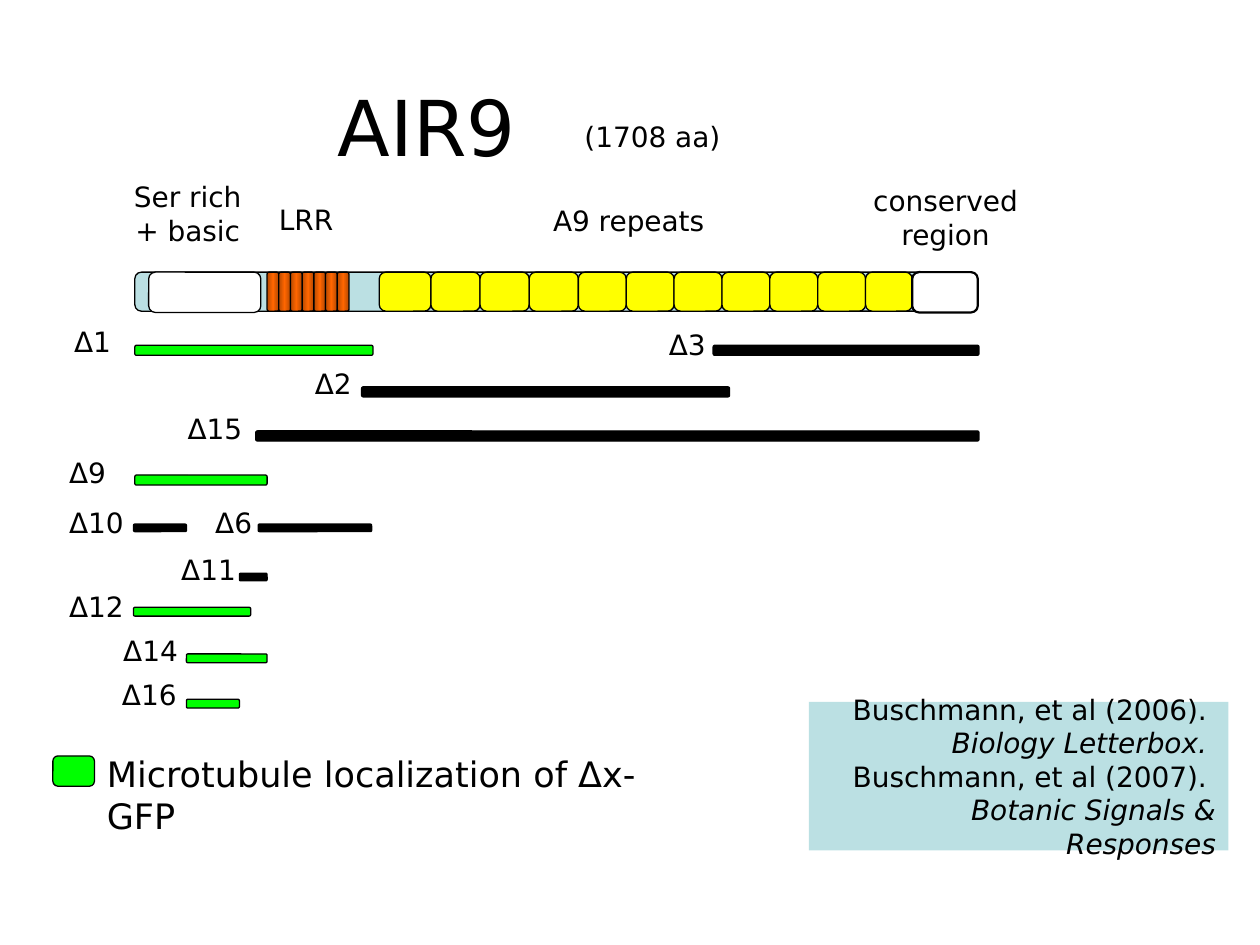
import copy
import itertools

import pptx
import pptx.dml.color
import pptx.enum.shapes
import pptx.enum.text
import pptx.oxml.ns
import pptx.util

Inches = pptx.util.Inches
ALIGN = pptx.enum.text.PP_ALIGN
ANCHOR = pptx.enum.text.MSO_ANCHOR
AUTO_SIZE = pptx.enum.text.MSO_AUTO_SIZE
SHAPE = pptx.enum.shapes.MSO_SHAPE

COLORS = {
    "ink": "000000",
    "white": "FFFFFF",
    "backbone": "BBE0E3",
    "repeat": "FFFF00",
    "localized": "00FF00",
    "lrr_edge": "B64900",
    "lrr_middle": "FF6600",
}
FONT = "DejaVu Sans"

# name, label left and top, bar left, top, width and height, localizes to microtubules
DELETIONS = [
    ("Δ1", 0.04, 0, 0.62, 0.21, 1.89, 0.08, True),
    ("Δ3", 4.76, 0.02, 5.21, 0.21, 2.11, 0.08, False),
    ("Δ2", 1.95, 0.33, 2.42, 0.54, 2.92, 0.08, False),
    ("Δ15", 0.94, 0.69, 1.58, 0.89, 5.74, 0.08, False),
    ("Δ9", 0, 1.04, 0.62, 1.24, 1.05, 0.08, True),
    ("Δ10", 0, 1.43, 0.61, 1.63, 0.42, 0.06, False),
    ("Δ6", 1.16, 1.43, 1.6, 1.63, 0.9, 0.06, False),
    ("Δ11", 0.89, 1.81, 1.45, 2.02, 0.22, 0.06, False),
    ("Δ12", 0, 2.1, 0.61, 2.29, 0.93, 0.07, True),
    ("Δ14", 0.43, 2.45, 1.03, 2.66, 0.64, 0.07, True),
    ("Δ16", 0.42, 2.8, 1.03, 3.02, 0.42, 0.07, True),
]


def rgb(name):
    return pptx.dml.color.RGBColor.from_string(COLORS[name])


def apply_format(target, values):
    for attribute, value in values.items():
        setattr(target, attribute, value)


def write(frame, lines, size=16, align=ALIGN.LEFT, italic_lines=(), **frame_format):
    """Fill a text frame with one paragraph per line."""
    apply_format(frame, {"word_wrap": False,
                         "auto_size": AUTO_SIZE.SHAPE_TO_FIT_TEXT, **frame_format})
    for index, line in enumerate(lines):
        paragraph = frame.add_paragraph() if index else frame.paragraphs[0]
        paragraph.alignment = align
        run = paragraph.add_run()
        run.text = line
        apply_format(run.font, {"name": FONT, "size": pptx.util.Pt(size),
                                "italic": index in italic_lines})
        run.font.color.rgb = rgb("ink")


def add_label(slide, left, top, width, height, lines, **text_format):
    label = slide.shapes.add_textbox(*map(Inches, (left, top, width, height)))
    write(label.text_frame, lines, **text_format)


def add_block(slide, left, top, width, height, color, line_width=0.75,
              preset=SHAPE.ROUNDED_RECTANGLE):
    block = slide.shapes.add_shape(preset, *map(Inches, (left, top, width, height)))
    block.shadow.inherit = False
    block.fill.solid()
    block.fill.fore_color.rgb = rgb(color)
    if line_width:
        block.line.color.rgb = rgb("ink")
        block.line.width = pptx.util.Pt(line_width)
    else:
        block.line.fill.background()
    return block


def shade_as_cylinder(block):
    """Give a block a gradient that is dark at both sides and bright in the middle."""
    block.fill.gradient()
    block.fill.gradient_angle = 0
    for stop in block.fill.gradient_stops:
        stop.color.rgb = rgb("lrr_edge")
    stops = block._element.spPr.find(".//" + pptx.oxml.ns.qn("a:gsLst"))
    middle = copy.deepcopy(stops[0])
    middle.set("pos", "50000")
    middle[0].set("val", COLORS["lrr_middle"])
    stops.insert(1, middle)


def add_heading(slide, left, top):
    title = slide.shapes.title
    apply_format(title, {"left": Inches(left), "top": Inches(top),
                         "width": Inches(2.31), "height": Inches(0.99)})
    write(title.text_frame, ["AIR9"], size=44, word_wrap=True,
          auto_size=AUTO_SIZE.NONE, vertical_anchor=ANCHOR.MIDDLE)
    add_label(slide, left + 1.96, top + 0.4, 1.32, 0.37, ["(1708 aa)"])


def add_protein(slide, left, top, width, height):
    """Draw the domain bar in the box, with the domain names above it."""
    add_block(slide, left, top, width, height, "backbone")
    add_block(slide, left + 0.11, top, 0.89, height + 0.01, "white")

    lrr_count, lrr_left, lrr_width = 7, left + 1.05, 0.65
    lrr_step = lrr_width / lrr_count
    for index in range(lrr_count):
        shade_as_cylinder(add_block(slide, lrr_left + index * lrr_step, top,
                                    lrr_step, height, "lrr_middle"))

    repeat_widths = [0.41] + [0.39] * 3 + [0.38] * 6 + [0.37]
    repeat_edges = itertools.accumulate(repeat_widths, initial=left + 1.94)
    for edge, repeat_width in zip(repeat_edges, repeat_widths):
        add_block(slide, edge, top, repeat_width, height, "repeat")
    add_block(slide, left + width - 0.52, top, 0.52, height + 0.01, "white", 1.25)

    for dx, rise, label_width, label_height, lines in [
        (-0.12, 0.78, 1.08, 0.64, ["Ser rich", "+ basic"]),
        (1.04, 0.6, 0.64, 0.37, ["LRR"]),
        (3.21, 0.59, 1.42, 0.37, ["A9 repeats"]),
        (5.76, 0.75, 1.35, 0.64, ["conserved", "region"]),
    ]:
        add_label(slide, left + dx, top - rise, label_width, label_height, lines,
                  align=ALIGN.CENTER)


def add_deletion_map(slide, left, top):
    for name, label_x, label_y, bar_x, bar_y, width, height, localized in DELETIONS:
        add_label(slide, left + label_x, top + label_y,
                  0.5 if len(name) == 2 else 0.64, 0.37, [name])
        add_block(slide, left + bar_x, top + bar_y, width, height,
                  "localized" if localized else "ink")


def add_legend(slide, left, top):
    add_block(slide, left, top + 0.08, 0.33, 0.24, "localized")
    add_label(slide, left + 0.33, top, 4.56, 0.44,
              ["Microtubule localization of Δx-GFP"], size=20, word_wrap=True)


def add_references(slide, left, top, width, height):
    panel = add_block(slide, left, top, width, height, "backbone", line_width=0,
                      preset=SHAPE.RECTANGLE)
    write(panel.text_frame,
          ["Buschmann, et al (2006). ", "Biology Letterbox. ",
           "Buschmann, et al (2007). ", "Botanic Signals & Responses"],
          align=ALIGN.RIGHT, italic_lines=(1, 3), word_wrap=True,
          vertical_anchor=ANCHOR.MIDDLE)


def main():
    deck = pptx.Presentation()
    apply_format(deck, {"slide_width": Inches(10), "slide_height": Inches(7.5)})
    slide = deck.slides.add_slide(deck.slide_layouts.get_by_name("Title Only"))
    add_heading(slide, 2.58, 0.5)
    add_protein(slide, 1.07, 2.16, 6.69, 0.31)
    add_deletion_map(slide, 0.45, 2.53)
    add_legend(slide, 0.42, 5.92)
    add_references(slide, 6.42, 5.57, 3.33, 1.18)
    deck.save("out.pptx")


if __name__ == "__main__":
    main()
